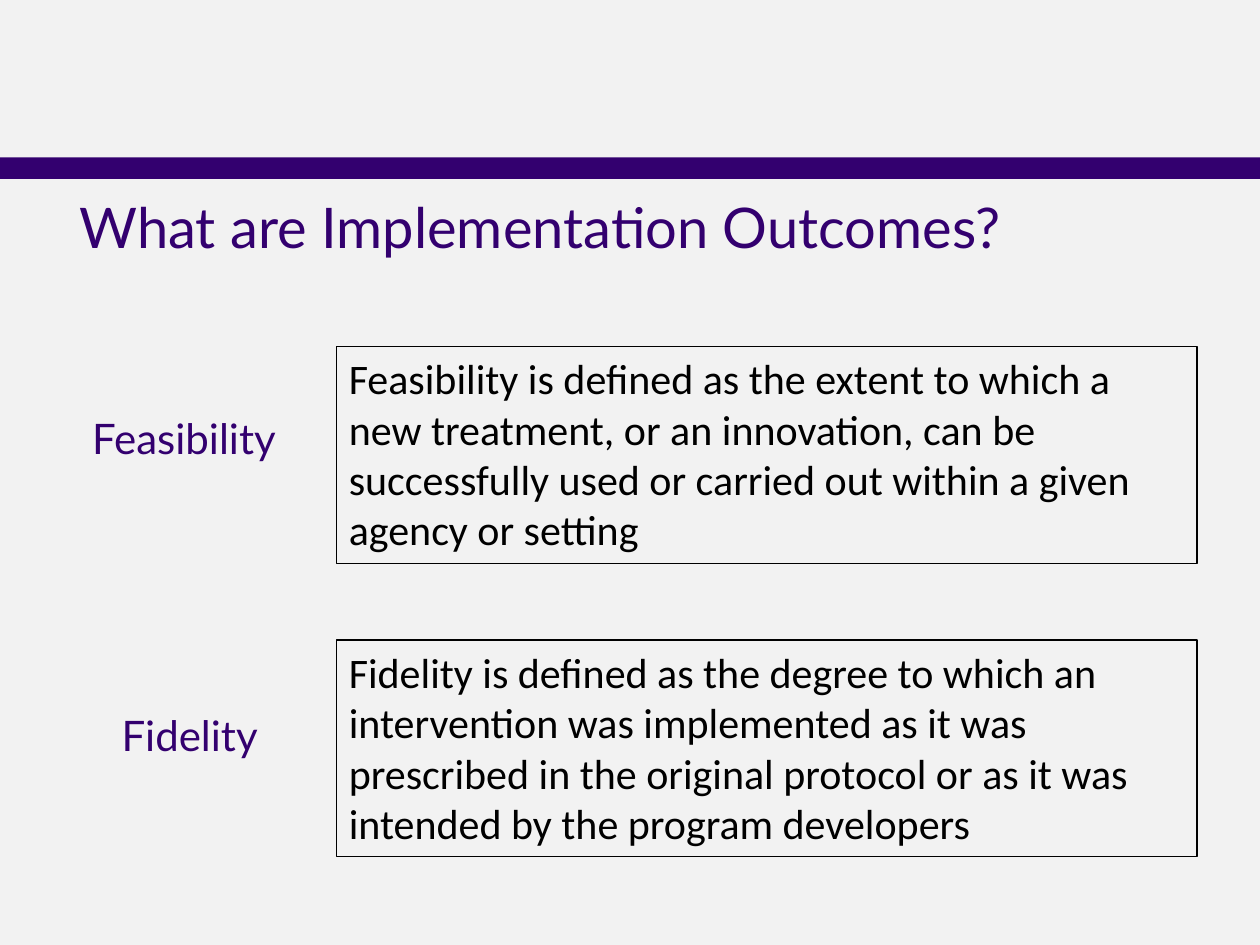
from dataclasses import dataclass

from pptx import Presentation
from pptx.dml.color import RGBColor
from pptx.enum.shapes import MSO_SHAPE
from pptx.enum.text import MSO_ANCHOR, PP_ALIGN
from pptx.shapes.base import BaseShape
from pptx.slide import Slide
from pptx.util import Inches, Pt

RECTANGLE = MSO_SHAPE.RECTANGLE
MIDDLE, TOP = MSO_ANCHOR.MIDDLE, MSO_ANCHOR.TOP
CENTER, LEFT = PP_ALIGN.CENTER, PP_ALIGN.LEFT


@dataclass(frozen=True)
class Theme:
    background: RGBColor = RGBColor(0xF2, 0xF2, 0xF2)
    accent: RGBColor = RGBColor(0x33, 0x00, 0x6F)
    ink: RGBColor = RGBColor(0x00, 0x00, 0x00)
    heading_font: str = "Lato"
    body_font: str = "Calibri"
    title_size: int = 32
    text_size: int = 24
    outline_width: float = 0.75


@dataclass(frozen=True)
class Box:
    left: float
    top: float
    width: float
    height: float

    def lengths(self) -> tuple[Inches, ...]:
        return tuple(map(Inches, (self.left, self.top, self.width, self.height)))


@dataclass(frozen=True)
class Outcome:
    name: str
    name_box: Box
    definition: str
    definition_top: float


THEME = Theme()
TITLE = "What are Implementation Outcomes?"
TITLE_BOX = Box(0.08, 1.42, 8.42, 0.75)
BAND_BOX = Box(0, 1.25, 10, 0.17)
OUTCOMES = (
    Outcome(
        "Feasibility",
        Box(0.25, 3.08, 2.42, 0.78),
        "Feasibility is deﬁned as the extent to which a new treatment, or an "
        "innovation, can be successfully used or carried out within a given "
        "agency or setting",
        2.75,
    ),
    Outcome(
        "Fidelity",
        Box(0.17, 5.42, 2.67, 0.83),
        "Fidelity is deﬁned as the degree to which an intervention was "
        "implemented as it was prescribed in the original protocol or as it was "
        "intended by the program developers",
        5.08,
    ),
)


def write_text(shape: BaseShape, text: str, font_name: str, size: int,
               color: RGBColor, alignment: PP_ALIGN, anchor: MSO_ANCHOR) -> None:
    text_frame = shape.text_frame
    text_frame.text = text
    text_frame.word_wrap = True
    text_frame.vertical_anchor = anchor
    paragraph = text_frame.paragraphs[0]
    paragraph.alignment = alignment
    font = paragraph.runs[0].font
    font.name = font_name
    font.size = Pt(size)
    font.color.rgb = color


def add_heading(slide: Slide, box: Box, text: str, size: int) -> None:
    shape = slide.shapes.add_textbox(*box.lengths())
    write_text(shape, text, THEME.heading_font, size, THEME.accent, CENTER, MIDDLE)


def add_rectangle(slide: Slide, box: Box) -> BaseShape:
    shape = slide.shapes.add_shape(RECTANGLE, *box.lengths())
    shape.shadow.inherit = False
    return shape


def add_band(slide: Slide) -> None:
    band = add_rectangle(slide, BAND_BOX)
    band.fill.solid()
    band.fill.fore_color.rgb = THEME.accent
    band.line.fill.background()


def add_outcome(slide: Slide, outcome: Outcome) -> None:
    add_heading(slide, outcome.name_box, outcome.name, THEME.text_size)
    frame = add_rectangle(slide, Box(2.67, outcome.definition_top, 6.83, 1.72))
    frame.fill.background()
    frame.line.color.rgb = THEME.ink
    frame.line.width = Pt(THEME.outline_width)
    write_text(frame, outcome.definition, THEME.body_font, THEME.text_size,
               THEME.ink, LEFT, TOP)


def main() -> None:
    presentation = Presentation()
    presentation.slide_width = Inches(10)
    presentation.slide_height = Inches(7.5)
    slide = presentation.slides.add_slide(presentation.slide_layouts[6])
    slide.background.fill.solid()
    slide.background.fill.fore_color.rgb = THEME.background
    add_band(slide)
    add_heading(slide, TITLE_BOX, TITLE, THEME.title_size)
    for outcome in OUTCOMES:
        add_outcome(slide, outcome)
    presentation.save("out.pptx")


if __name__ == "__main__":
    main()
